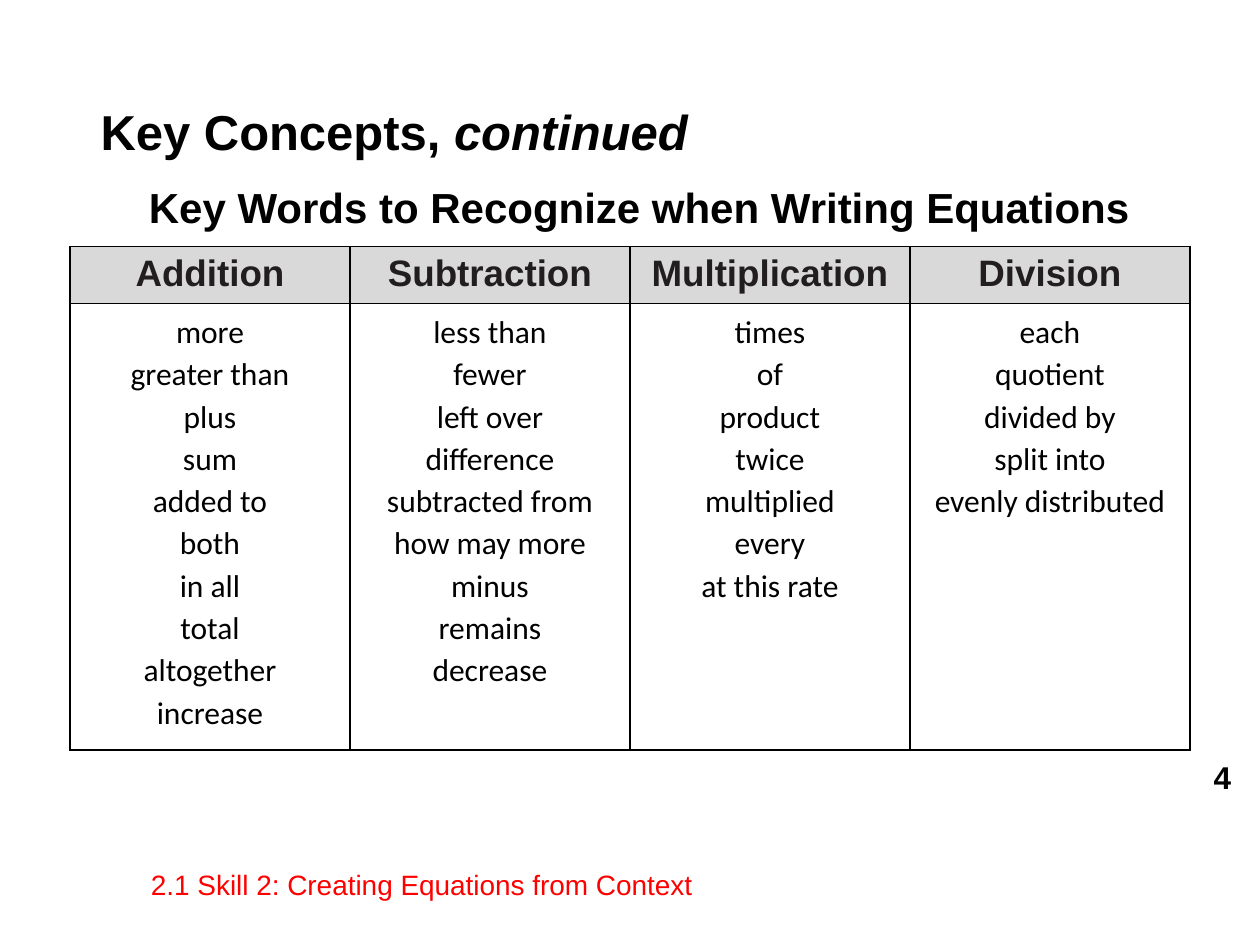
from dataclasses import dataclass

from lxml.etree import SubElement
from pptx import Presentation
from pptx.dml.color import RGBColor
from pptx.enum.text import MSO_ANCHOR, PP_ALIGN
from pptx.oxml.ns import qn
from pptx.util import Pt


@dataclass(frozen=True)
class Theme:
    black: str = "000000"
    ink: str = "221E1F"
    red: str = "FF0000"
    gray: str = "D9D9D9"
    white: str = "FFFFFF"
    sans: str = "Arial"
    body: str = "Calibri"
    title: int = 28
    sub: int = 24
    head: int = 21
    text: int = 18
    foot: int = 16


THEME = Theme()

WORDS = {
    "Addition": ["more", "greater than", "plus", "sum", "added to", "both",
                 "in all", "total", "altogether", "increase"],
    "Subtraction": ["less than", "fewer", "left over", "difference",
                    "subtracted from", "how may more", "minus", "remains",
                    "decrease"],
    "Multiplication": ["times", "of", "product", "twice", "multiplied",
                       "every", "at this rate"],
    "Division": ["each", "quotient", "divided by", "split into",
                 "evenly distributed"],
}


def apply(target, **values):
    for name, value in values.items():
        setattr(target, name, value)


def write(para, text, size, color=THEME.black, face=THEME.sans,
          bold=False, italic=False):
    run = para.add_run()
    run.text = text
    apply(run.font, size=Pt(size), name=face, bold=bold, italic=italic)
    run.font.color.rgb = RGBColor.from_string(color)


def add_box(slide, box, anchor=MSO_ANCHOR.TOP):
    frame = slide.shapes.add_textbox(*map(Pt, box)).text_frame
    apply(frame, word_wrap=True, vertical_anchor=anchor)
    return frame


def add_title(slide, box):
    frame = add_box(slide, box)
    first = frame.paragraphs[0]
    first.space_after = Pt(6)
    write(first, "Key Concepts, ", THEME.title, bold=True)
    write(first, "continued", THEME.title, bold=True, italic=True)
    second = frame.add_paragraph()
    apply(second, alignment=PP_ALIGN.CENTER, space_before=Pt(6))
    write(second, "Key Words to Recognize when Writing Equations ",
          THEME.sub, bold=True)


def add_edges(cell):
    props = cell._tc.get_or_add_tcPr()
    for side in ("lnL", "lnR", "lnT", "lnB"):
        line = SubElement(props, qn(f"a:{side}"), w=str(Pt(1)))
        fill = SubElement(line, qn("a:solidFill"))
        SubElement(fill, qn("a:srgbClr"), val=THEME.black)


def fill_cell(cell, lines, back, space, **style):
    add_edges(cell)
    cell.fill.solid()
    cell.fill.fore_color.rgb = RGBColor.from_string(back)
    frame = cell.text_frame
    for index, line in enumerate(lines):
        para = frame.add_paragraph() if index else frame.paragraphs[0]
        apply(para, alignment=PP_ALIGN.CENTER, line_spacing=space)
        write(para, line, **style)


def add_words(slide, box, top=30.8):
    width, height = box[2:]
    table = slide.shapes.add_table(2, len(WORDS), *map(Pt, box)).table
    for row, size in zip(table.rows, (top, height - top)):
        row.height = Pt(size)
    for index, (name, words) in enumerate(WORDS.items()):
        table.columns[index].width = Pt(width / len(WORDS))
        fill_cell(table.cell(0, index), [name], THEME.gray, 1.0,
                  size=THEME.head, color=THEME.ink, bold=True)
        fill_cell(table.cell(1, index), words, THEME.white, 1.1,
                  size=THEME.text, face=THEME.body)


def add_number(slide, box):
    para = add_box(slide, box, MSO_ANCHOR.MIDDLE).paragraphs[0]
    para.alignment = PP_ALIGN.RIGHT
    write(para, "4", THEME.text, bold=True)


def add_footer(slide, box):
    para = add_box(slide, box).paragraphs[0]
    write(para, "2.1 Skill 2: Creating Equations from Context",
          THEME.foot, THEME.red)


def main():
    deck = Presentation()
    apply(deck, slide_width=Pt(720), slide_height=Pt(540))
    slide = deck.slides.add_slide(deck.slide_layouts[6])
    add_title(slide, (50.4, 54.4, 636.5, 390))
    add_words(slide, (40, 141, 640, 286))
    add_number(slide, (653, 432.7, 57.6, 22.3))
    add_footer(slide, (79.2, 492.5, 547.2, 28))
    deck.save("out.pptx")


if __name__ == "__main__":
    main()
